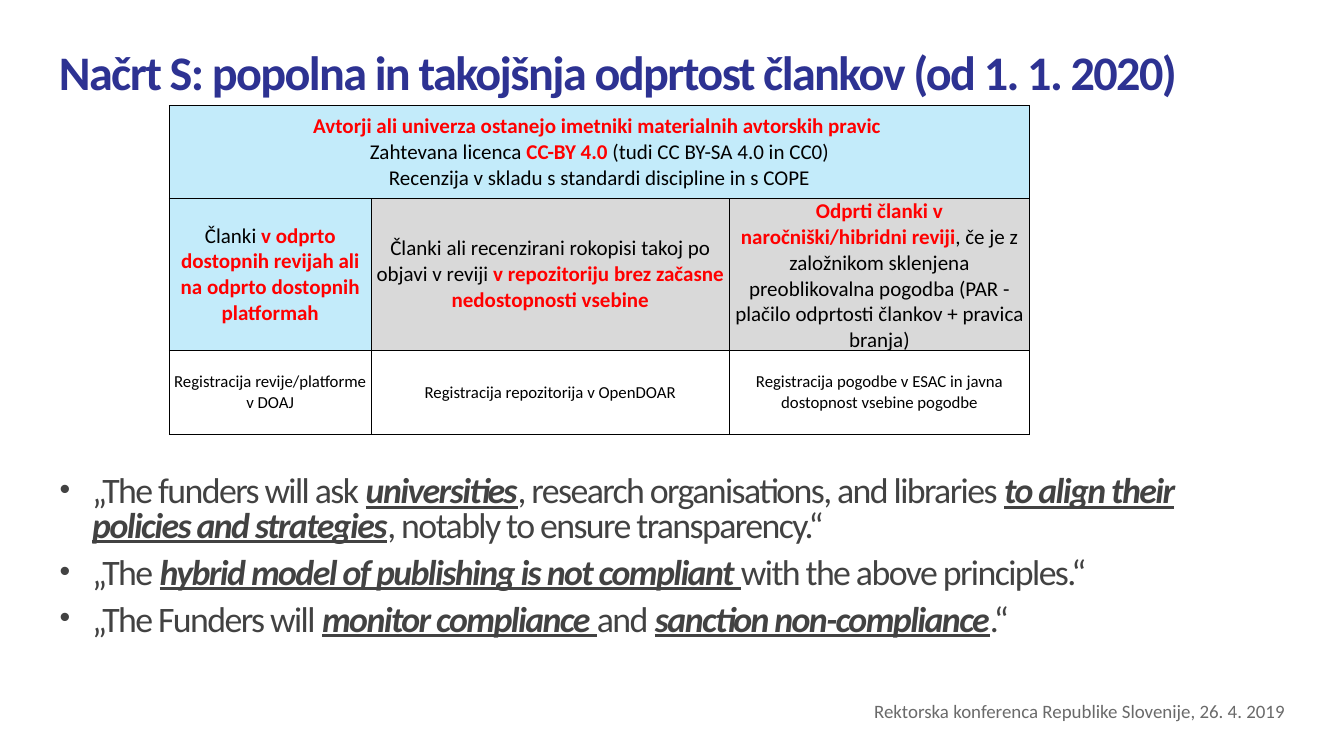
import pptx
import pptx.dml.color
import pptx.enum.text
import pptx.oxml
import pptx.oxml.ns
import pptx.util

Inches = pptx.util.Inches
Pt = pptx.util.Pt
RGBColor = pptx.dml.color.RGBColor
Align = pptx.enum.text.PP_ALIGN
Anchor = pptx.enum.text.MSO_ANCHOR

NAVY = RGBColor(0x2D, 0x32, 0x92)
DARK = RGBColor(0x42, 0x42, 0x42)
GREY = RGBColor(0x6A, 0x6A, 0x6A)
RED = RGBColor(0xFF, 0, 0)
BLACK = RGBColor(0, 0, 0)
BLUE = RGBColor(0xC3, 0xEB, 0xFA)
PALE = RGBColor(0xD9, 0xD9, 0xD9)

TITLE = "Načrt S: popolna in takojšnja odprtost člankov (od 1. 1. 2020)"
FOOTER = "Rektorska konferenca Republike Slovenije, 26. 4. 2019"
QUOTES = [
    "„The funders will ask *universities*, research organisations, and libraries "
    "*to align their policies and strategies*, notably to ensure transparency.“",
    "„The *hybrid model of publishing is not compliant *with the above principles.“",
    "„The Funders will *monitor compliance *and *sanction non-compliance*.“",
]
RIGHTS = [
    "*Avtorji ali univerza ostanejo imetniki materialnih avtorskih pravic *",
    "Zahtevana licenca *CC-BY 4.0 *(tudi CC BY-SA 4.0 in CC0)",
    "Recenzija v skladu s standardi discipline in s COPE",
]
ROUTES = [
    "Članki *v odprto dostopnih revijah ali na odprto dostopnih platformah*",
    "Članki ali recenzirani rokopisi takoj po objavi v reviji "
    "*v repozitoriju brez začasne nedostopnosti vsebine*",
    "*Odprti članki v naročniški/hibridni reviji*, če je z založnikom sklenjena "
    "preoblikovalna pogodba (PAR - plačilo odprtosti člankov + pravica branja)",
]
RECORDS = [
    "Registracija revije/platforme v DOAJ",
    "Registracija repozitorija v OpenDOAR",
    "Registracija pogodbe v ESAC in javna dostopnost vsebine pogodbe",
]
GRID = [
    ([RIGHTS], 20, [BLUE]),
    ([[text] for text in ROUTES], 20, [BLUE, PALE, PALE]),
    ([[text] for text in RECORDS], 16, [None] * 3),
]


def add_frame(slide, left, top, width, height, anchor):
    """Add a wrapped text box without margins and return its text frame."""
    box = slide.shapes.add_textbox(
        Inches(left), Inches(top), Inches(width), Inches(height))
    frame = box.text_frame
    frame.word_wrap = True
    frame.vertical_anchor = anchor
    frame.margin_left = frame.margin_right = 0
    frame.margin_top = frame.margin_bottom = 0
    return frame


def style_font(para, size, color):
    """Set the font that all runs of a paragraph share."""
    font = para.font
    font.name, font.size = "Calibri", Pt(size)
    font.color.rgb = color


def add_runs(para, text):
    """Split text at asterisks; yield each run and whether it is stressed."""
    for index, part in enumerate(text.split("*")):
        if part:
            run = para.add_run()
            run.text = part
            yield run, index % 2 == 1


def tighten(run):
    """Draw the letters of a run closer together."""
    run.font._element.set("spc", "-150")


def add_bullet(para):
    """Give a paragraph a hanging round bullet."""
    props = para._p.get_or_add_pPr()
    props.set("marL", str(Inches(0.43)))
    props.set("indent", str(-Inches(0.43)))
    space = pptx.oxml.ns.nsdecls("a")
    for mark in (f'<a:buClr {space}><a:srgbClr val="{DARK}"/></a:buClr>',
                 f'<a:buSzPct {space} val="85000"/>',
                 f'<a:buFont {space} typeface="Arial"/>',
                 f'<a:buChar {space} char="•"/>'):
        props.append(pptx.oxml.parse_xml(mark))


def add_title(slide):
    """Add the slide title."""
    frame = add_frame(slide, 0.78, 0.37, 15.56, 1.25, Anchor.MIDDLE)
    para = frame.paragraphs[0]
    para.line_spacing = 0.9
    style_font(para, 45.9, NAVY)
    para.font.bold = True
    for run, _ in add_runs(para, TITLE):
        tighten(run)


def add_quotes(slide):
    """Add the bulleted quotes with their stressed words."""
    frame = add_frame(slide, 0.79, 6.3, 14.78, 2.77, Anchor.TOP)
    for index, text in enumerate(QUOTES):
        para = frame.add_paragraph() if index else frame.paragraphs[0]
        add_bullet(para)
        para.line_spacing = 0.8
        para.space_before = Pt(12 if index else 0)
        style_font(para, 34.1, DARK)
        for run, stress in add_runs(para, text):
            tighten(run)
            if stress:
                run.font.bold = run.font.italic = run.font.underline = True


def add_footer(slide):
    """Add the event line at the lower right."""
    frame = add_frame(slide, 7.93, 9.2, 9.07, 0.41, Anchor.MIDDLE)
    para = frame.paragraphs[0]
    para.alignment = Align.RIGHT
    style_font(para, 18, GREY)
    para.add_run().text = FOOTER


def style_cell(cell, fill):
    """Set the borders, fill and margins of a table cell."""
    props = cell._tc.get_or_add_tcPr()
    space = pptx.oxml.ns.nsdecls("a")
    for side in "LRTB":
        props.append(pptx.oxml.parse_xml(
            f'<a:ln{side} {space} w="12700"><a:solidFill>'
            f'<a:srgbClr val="{BLACK}"/></a:solidFill></a:ln{side}>'))
    if fill is None:
        cell.fill.background()
    else:
        cell.fill.solid()
        cell.fill.fore_color.rgb = fill
    cell.vertical_anchor = Anchor.MIDDLE
    cell.margin_left = cell.margin_right = Inches(0.05)
    cell.margin_top = cell.margin_bottom = 0


def fill_cell(cell, lines, size):
    """Write centred lines into a cell, with stressed words bold and red."""
    frame = cell.text_frame
    for index, text in enumerate(lines):
        para = frame.add_paragraph() if index else frame.paragraphs[0]
        para.alignment = Align.CENTER
        style_font(para, size, BLACK)
        for run, stress in add_runs(para, text):
            run.font.bold = stress
            run.font.color.rgb = RED if stress else BLACK


def add_grid(slide):
    """Add the table of routes to open access."""
    table = slide.shapes.add_table(
        3, 3, Inches(2.24), Inches(1.4), Inches(11.38), Inches(4.28)).table
    table.first_row = table.horz_banding = False
    for column, width in zip(table.columns, (2.67, 4.74, 3.97)):
        column.width = Inches(width)
    for row, height in zip(table.rows, (1.23, 1.93, 1.12)):
        row.height = Inches(height)
    table.cell(0, 0).merge(table.cell(0, 2))
    for row, (texts, size, fills) in zip(table.rows, GRID):
        for index, cell in enumerate(row.cells):
            style_cell(cell, fills[min(index, len(fills) - 1)])
            if index < len(texts):
                fill_cell(cell, texts[index], size)


def main():
    """Build the slide and save it."""
    deck = pptx.Presentation()
    deck.slide_width, deck.slide_height = Inches(17.78), Inches(10)
    slide = deck.slides.add_slide(deck.slide_layouts[6])
    add_quotes(slide)
    add_title(slide)
    add_footer(slide)
    add_grid(slide)
    deck.save("out.pptx")


if __name__ == "__main__":
    main()
